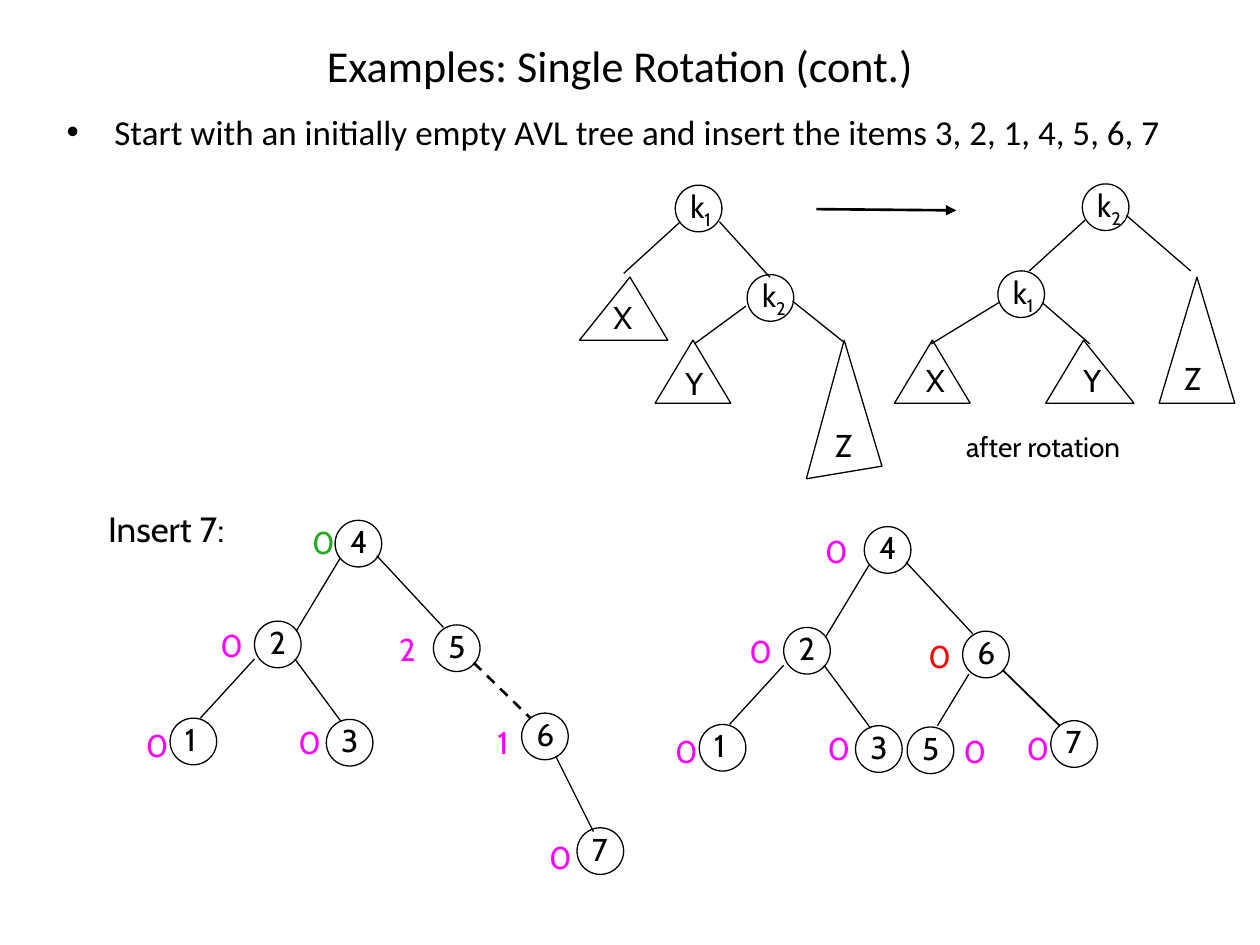
from dataclasses import dataclass

from lxml import etree
from pptx import Presentation, util as u
from pptx.dml.color import RGBColor
from pptx.enum import dml, shapes as kinds, text as t
from pptx.oxml.ns import qn

CELL = u.Inches(0.1)  # the slide is a grid of 100 columns by 75 rows
COLUMNS, ROWS = 100, 75
CIRCLE = 3.7
BLACK, PINK, RED, GREEN = "000000", "FF00FF", "FF0000", "22AA22"


@dataclass
class Edge:
    start: tuple[float, float]
    end: tuple[float, float]
    width: float = 0.75
    dashed: bool = False
    arrow: bool = False


@dataclass
class Subtree:
    label: str
    left: float
    top: float
    label_shift: float
    tall: bool = False


@dataclass
class TreeNode:
    key: str
    left: float
    top: float
    balance: str
    shift: tuple[float, float]  # from the circle to its balance factor
    color: str = PINK


def grid(*cells: float) -> list[int]:
    return [round(cell * CELL) for cell in cells]


def paint(color_format, value: str) -> None:
    color_format.rgb = RGBColor.from_string(value)


def write(shapes, words: str, left, top, width, height=4.0, *, size=18, font="Cabin",
          color=BLACK, wrap=False, align=t.PP_ALIGN.LEFT, anchor=t.MSO_ANCHOR.TOP):
    """Add a text box; characters after an underscore are set as a subscript."""
    box = shapes.add_textbox(*grid(left, top, width, height))
    frame = box.text_frame
    frame.word_wrap = wrap
    frame.auto_size = t.MSO_AUTO_SIZE.NONE if wrap else t.MSO_AUTO_SIZE.SHAPE_TO_FIT_TEXT
    frame.vertical_anchor = anchor
    para = frame.paragraphs[0]
    para.alignment = align
    base, _, subscript = words.partition("_")
    for part in filter(None, (base, subscript)):
        span = para.add_run()
        span.text = part
        span.font.size, span.font.name = u.Pt(size), font
        paint(span.font.color, color)
    if subscript:
        span.font._element.set("baseline", "-25000")
    return para


def add_bullet(para, indent: float) -> None:
    props = para._p.get_or_add_pPr()
    props.set("marL", str(u.Inches(indent)))
    props.set("indent", str(-u.Inches(indent)))
    etree.SubElement(props, qn("a:buFont")).set("typeface", "Arial")
    etree.SubElement(props, qn("a:buChar")).set("char", "•")


def outline(shape) -> None:
    shape.shadow.inherit = False
    shape.fill.background()
    paint(shape.line.color, BLACK)
    shape.line.width = u.Pt(0.75)


def draw_edge(shapes, edge: Edge, dx=0.0, dy=0.0) -> None:
    (x1, y1), (x2, y2) = edge.start, edge.end
    link = shapes.add_connector(kinds.MSO_CONNECTOR.STRAIGHT,
                                *grid(x1 + dx, y1 + dy, x2 + dx, y2 + dy))
    paint(link.line.color, BLACK)
    link.line.width = u.Pt(edge.width)
    if edge.dashed:
        link.line.dash_style = dml.MSO_LINE.DASH
    if edge.arrow:
        etree.SubElement(link.line._get_or_add_ln(), qn("a:tailEnd")).set("type", "triangle")
    etree.SubElement(link._element.spPr, qn("a:effectLst"))


def draw_circle(shapes, label: str, left: float, top: float) -> None:
    group = shapes.add_group_shape().shapes
    outline(group.add_shape(kinds.MSO_SHAPE.OVAL, *grid(left, top, CIRCLE, CIRCLE)))
    write(group, label, left + 0.2, top - 0.35, 4.2 if "_" in label else 3.4)


def draw_subtree(shapes, tree: Subtree) -> None:
    left_foot, right_foot, label_drop = (10.4, 10.3, 6.2) if tree.tall else (5.15, 5.15, 1.2)
    x, y = tree.left, tree.top
    builder = shapes.build_freeform(x + 3.1, y, scale=CELL)
    builder.add_line_segments([(x, y + left_foot), (x + 6.5, y + right_foot)], close=True)
    outline(builder.convert_to_shape())
    write(shapes, tree.label, x + tree.label_shift, y + label_drop, 3.5)


def draw_tree(shapes, nodes: list[TreeNode], edges: list[Edge], dx=0.0, dy=0.0) -> None:
    for edge in edges:
        draw_edge(shapes, edge, dx, dy)
    for node in nodes:
        left, top = node.left + dx, node.top + dy
        draw_circle(shapes, node.key, left, top)
        write(shapes, node.balance, left + node.shift[0], top + node.shift[1], 3.4,
              color=node.color)


# Rotation scheme
ROTATION_NODES = [("k_1", 53.6, 14.7), ("k_2", 59.3, 21.8),
                  ("k_2", 85.9, 14.6), ("k_1", 79.2, 21.5)]
SUBTREES = [
    Subtree("X", 46.5, 22, 1.2), Subtree("Y", 52, 27.2, 1.4),
    Subtree("Z", 63.9, 27.1, 1.4, tall=True),
    Subtree("X", 70.9, 27, 1.6), Subtree("Y", 83.4, 27, 1.6),
    Subtree("Z", 91.5, 21.8, 1.5, tall=True),
]
ROTATION_EDGES = [
    Edge((54, 17.6), (49.5, 21.7)), Edge((57.1, 17.6), (61.1, 22)),
    Edge((59.2, 24.3), (55.1, 27.3)), Edge((62.9, 23.9), (66.9, 27.1)),
    Edge((86.2, 17.4), (81.7, 21.5)), Edge((89.4, 17.1), (94.5, 21.5)),
    Edge((79.3, 24), (73.9, 27.3)), Edge((82.7, 24), (86.5, 27.3)),
    Edge((64.8, 16.6), (75.9, 16.7), width=1.5, arrow=True),
]

# Example trees: the balanced one is the first one moved, with new right-hand keys
SHIFT = (42, 0.5)
SHARED_NODES = [
    TreeNode("2", 20.2, 49.3, "0", (-3.7, -0.1)),
    TreeNode("1", 13.5, 57, "0", (-2.9, 0.1)),
    TreeNode("3", 25.9, 57.1, "0", (-3.2, -0.2)),
]
SHARED_EDGES = [
    Edge((27, 44.3), (23.5, 50.1)), Edge((29.9, 44.1), (35.2, 49.8)),
    Edge((20.2, 52.3), (15.9, 57)), Edge((23.4, 52.3), (27.1, 57.3)),
]
BEFORE_NODES = [
    TreeNode("4", 26.6, 41.3, "0", (-2.8, -0.3), GREEN),
    TreeNode("5", 34.4, 49.6, "2", (-3.7, -0.1)),
    TreeNode("6", 41.4, 56.6, "1", (-2.9, 0.3)),
    TreeNode("7", 45.8, 65.7, "0", (-3.2, 0.3)),
]
BEFORE_EDGES = [Edge((37.6, 52.6), (42.1, 57), width=1.5, dashed=True),
                Edge((44.1, 60), (47.1, 66))]
AFTER_NODES = [
    TreeNode("4", 26.6, 41.3, "0", (-4.1, -0.1)),
    TreeNode("6", 34.4, 49.6, "0", (-3.7, 0), RED),
    TreeNode("7", 41.4, 56.7, "0", (-2.9, 0.2)),
    TreeNode("5", 30, 57.2, "0", (3.5, -0.1)),
]
AFTER_EDGES = [Edge((37.6, 52.7), (42.1, 57.1), width=1), Edge((34.9, 53), (32.4, 57.1))]


def main() -> None:
    deck = Presentation()
    deck.slide_width, deck.slide_height = grid(COLUMNS, ROWS)
    page = deck.slides.add_slide(deck.slide_layouts[6])
    shapes = page.shapes

    # Heading and task
    write(shapes, "Examples: Single Rotation (cont.)", 6.7, 3.3, 85, 3.7, size=25.2,
          font="Calibri", wrap=True, align=t.PP_ALIGN.CENTER, anchor=t.MSO_ANCHOR.MIDDLE)
    task = write(shapes, "Start with an initially empty AVL tree and insert the items "
                 "3, 2, 1, 4, 5, 6, 7", 4.3, 8.3, 91.6, 7.9, size=20, font="Calibri", wrap=True)
    task.space_before = u.Pt(4)
    add_bullet(task, 0.38)

    # Rotation scheme
    scheme = shapes.add_group_shape().shapes
    for edge in ROTATION_EDGES:
        draw_edge(scheme, edge)
    for node in ROTATION_NODES:
        draw_circle(scheme, *node)
    for tree in SUBTREES:
        draw_subtree(scheme, tree)
    write(scheme, "after rotation", 75.7, 33.6, 14.9, 3.7, size=16)

    # Trees before and after the rotation
    write(shapes, "Insert 7:", 7.6, 39.8, 12.6, 4.3, size=20)
    draw_tree(shapes, SHARED_NODES + BEFORE_NODES, SHARED_EDGES + BEFORE_EDGES)
    draw_tree(shapes, SHARED_NODES + AFTER_NODES, SHARED_EDGES + AFTER_EDGES, *SHIFT)

    deck.save("out.pptx")


if __name__ == "__main__":
    main()
